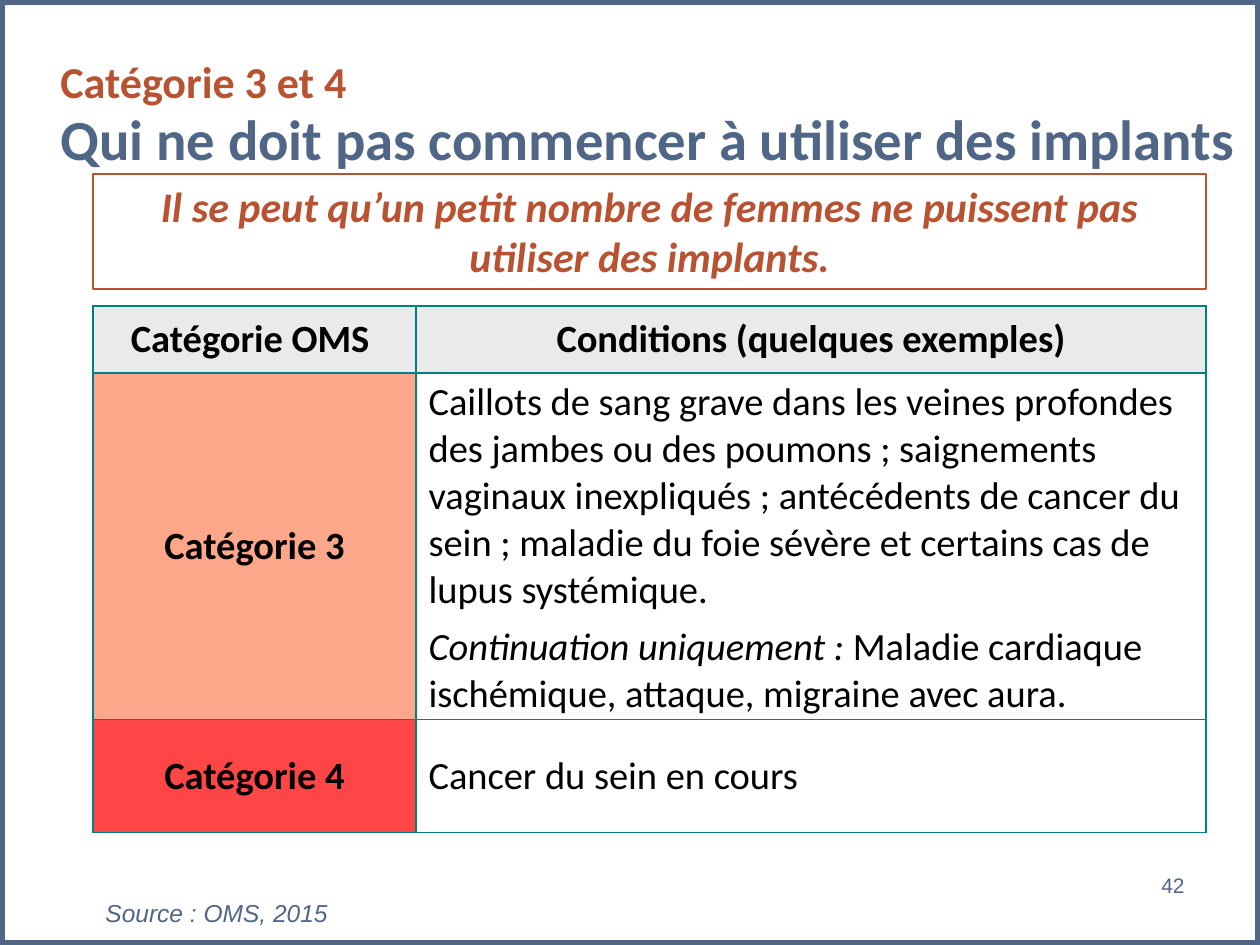
"""Build the slide on who should not start using implants."""
from dataclasses import dataclass, field
from typing import Any

from lxml.etree import SubElement
from pptx import Presentation
from pptx.dml.color import RGBColor as Rgb
from pptx.enum.shapes import MSO_SHAPE as Shape
from pptx.enum.text import MSO_ANCHOR as Anchor, PP_ALIGN as Align
from pptx.oxml.ns import qn
from pptx.util import Emu, Pt

SCALE = 914400 / 126
INK = {
    "rust": "B85231", "slate": "506687", "black": "000000", "teal": "008080",
    "grey": "EAEAEA", "peach": "FCA789", "red": "FF4646",
}
FONT = {
    "top": {"name": "Calibri", "size": Pt(25.2), "bold": True},
    "title": {"name": "Calibri", "size": Pt(32.4), "bold": True},
    "note": {"name": "Calibri", "size": Pt(24), "bold": True, "italic": True},
    "head": {"name": "Calibri", "size": Pt(22), "bold": True},
    "body": {"name": "Calibri", "size": Pt(22), "bold": False},
    "lead": {"name": "Calibri", "size": Pt(22), "bold": False, "italic": True},
    "page": {"name": "Arial", "size": Pt(12)},
    "source": {"name": "Arial", "size": Pt(14), "italic": True},
}


@dataclass(frozen=True)
class Run:
    text: str
    font: str = "body"
    ink: str = "black"


@dataclass(frozen=True)
class Para:
    runs: list[Run]
    form: dict[str, Any] = field(default_factory=dict)


@dataclass(frozen=True)
class Box:
    rect: tuple[int, int, int, int]
    paras: list[Para] = field(default_factory=list)
    line: str = ""
    width: float = 0
    anchor: Any = Anchor.TOP


@dataclass(frozen=True)
class Cell:
    paras: list[Para]
    fill: str = ""


def px(size: int) -> Emu:
    """Turn pixels into EMU."""
    return Emu(round(size * SCALE))


def rgb(ink: str) -> Rgb:
    """Look up a colour."""
    return Rgb.from_string(INK[ink])


def put(target: Any, form: dict[str, Any]) -> None:
    """Set each format value on the target."""
    for name, value in form.items():
        setattr(target, name, value)


def write(frame: Any, paras: list[Para]) -> None:
    """Fill a text frame with paragraphs."""
    for i, para in enumerate(paras):
        part = frame.add_paragraph() if i else frame.paragraphs[0]
        put(part, para.form)
        for item in para.runs:
            if item.text == "\n":
                part.add_line_break()
                continue
            run = part.add_run()
            run.text = item.text
            put(run.font, FONT[item.font])
            run.font.color.rgb = rgb(item.ink)


def draw(slide: Any, box: Box) -> None:
    """Draw a text box, or an outlined rectangle if it has a line."""
    rect = [px(n) for n in box.rect]
    if box.line:
        shape = slide.shapes.add_shape(Shape.RECTANGLE, *rect)
        shape.shadow.inherit = False
        shape.fill.background()
        shape.line.color.rgb = rgb(box.line)
        shape.line.width = Pt(box.width)
    else:
        shape = slide.shapes.add_textbox(*rect)
    frame = shape.text_frame
    put(frame, {"word_wrap": True, "vertical_anchor": box.anchor})
    write(frame, box.paras)


def edge(cell: Any, ink: str) -> None:
    """Give a cell a thin border on all sides."""
    props = cell._tc.get_or_add_tcPr()
    for i, side in enumerate(("lnL", "lnR", "lnT", "lnB")):
        line = SubElement(props, qn(f"a:{side}"), w=str(Pt(1)))
        fill = SubElement(line, qn("a:solidFill"))
        SubElement(fill, qn("a:srgbClr"), val=INK[ink])
        props.insert(i, line)


def grid(slide: Any, left: int, top: int, cols: list[int],
         rows: list[int], cells: list[list[Cell]]) -> None:
    """Draw the table."""
    rect = [px(n) for n in (left, top, sum(cols), sum(rows))]
    table = slide.shapes.add_table(len(rows), len(cols), *rect).table
    put(table, {"first_row": False, "horz_banding": False})
    for col, size in zip(table.columns, cols):
        col.width = px(size)
    for row, size, line in zip(table.rows, rows, cells):
        row.height = px(size)
        for cell, item in zip(row.cells, line):
            cell.vertical_anchor = Anchor.MIDDLE
            if item.fill:
                cell.fill.solid()
                cell.fill.fore_color.rgb = rgb(item.fill)
            else:
                cell.fill.background()
            edge(cell, "teal")
            write(cell.text_frame, item.paras)


MID = {"alignment": Align.CENTER}
LEFT = {"alignment": Align.LEFT}


def label(text: str, fill: str) -> Cell:
    """Make a bold, centred cell."""
    return Cell([Para([Run(text, "head")], MID)], fill)


BOXES = [
    Box((48, 37, 1212, 157), [Para([
        Run("Catégorie 3 et 4", "top", "rust"), Run("\n"),
        Run("Qui ne doit pas commencer à utiliser des implants", "title", "slate"),
    ], {"line_spacing": 0.95})], anchor=Anchor.MIDDLE),
    Box((93, 174, 1113, 115), [Para([Run(
        "Il se peut qu’un petit nombre de femmes ne puissent pas utiliser des implants.",
        "note", "rust")], MID)], "rust", 0.75),
    Box((1149, 866, 78, 38), [Para([Run("42", "page", "slate")])]),
    Box((0, 0, 1260, 945), line="slate", width=5.25),
    Box((93, 895, 672, 34), [Para(
        [Run("Source : OMS, 2015", "source", "slate")], {"line_spacing": 0.9})]),
]
CELLS = [
    [label("Catégorie OMS ", "grey"), label("Conditions (quelques exemples)", "grey")],
    [label("Catégorie 3", "peach"), Cell([
        Para([Run(
            "Caillots de sang grave dans les veines profondes des jambes ou des "
            "poumons ; saignements vaginaux inexpliqués ; antécédents de cancer du "
            "sein ; maladie du foie sévère et certains cas de lupus systémique.")], LEFT),
        Para([Run("Continuation uniquement :", "lead"),
              Run(" Maladie cardiaque ischémique, attaque, migraine avec aura.")],
             {**LEFT, "space_before": Pt(6)}),
    ])],
    [label("Catégorie 4", "red"), Cell([Para([Run("Cancer du sein en cours")], LEFT)])],
]


def main() -> None:
    """Build and save the slide."""
    deck = Presentation()
    put(deck, {"slide_width": px(1260), "slide_height": px(945)})
    slide = deck.slides.add_slide(deck.slide_layouts[6])
    for box in BOXES:
        draw(slide, box)
    grid(slide, 93, 306, [323, 790], [67, 329, 113], CELLS)
    deck.save("out.pptx")


if __name__ == "__main__":
    main()
